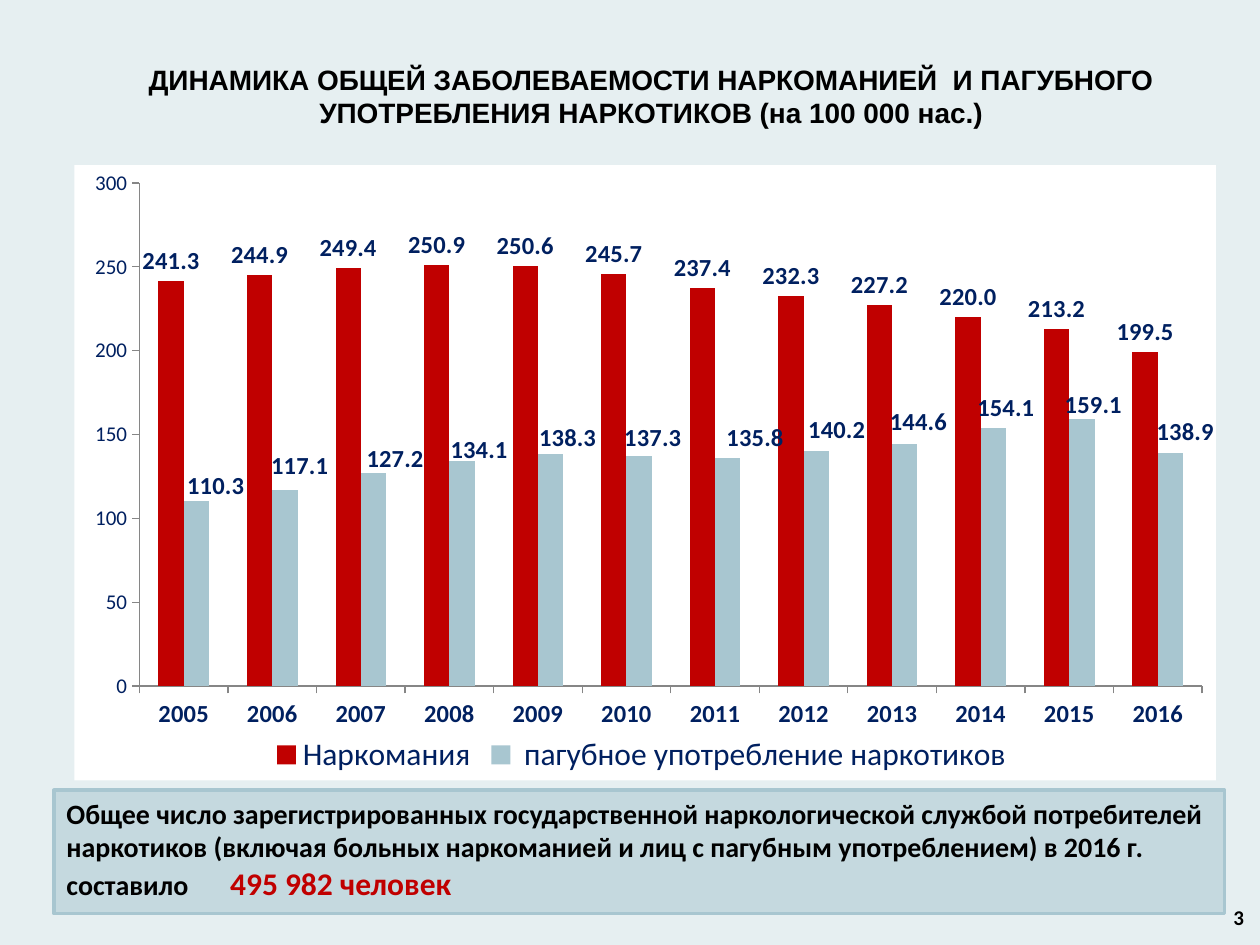
"""Build the slide on drug addiction incidence, 2005 to 2016."""
from lxml.etree import SubElement
from pptx import Presentation
from pptx.chart.data import CategoryChartData
from pptx.dml.color import RGBColor
from pptx.enum.chart import XL_CHART_TYPE as ChartType
from pptx.enum.chart import XL_LABEL_POSITION as LabelPos
from pptx.enum.chart import XL_LEGEND_POSITION as LegendPos
from pptx.enum.chart import XL_TICK_MARK as Tick
from pptx.enum.shapes import MSO_SHAPE as Shape
from pptx.enum.text import MSO_ANCHOR as Anchor
from pptx.enum.text import PP_ALIGN as Align
from pptx.oxml import parse_xml
from pptx.oxml.ns import nsdecls, qn
from pptx.util import Cm, Pt

BLACK = RGBColor(0x00, 0x00, 0x00)
NAVY = RGBColor(0x00, 0x20, 0x60)
RED = RGBColor(0xC0, 0x00, 0x00)
STEEL = RGBColor(0xA8, 0xC6, 0xD0)
PANEL = RGBColor(0xC5, 0xD9, 0xDF)
PALE = RGBColor(0xE6, 0xEF, 0xF1)
GREY = RGBColor(0x86, 0x86, 0x86)

YEARS = [str(year) for year in range(2005, 2017)]
ADDICTION = [241.3, 244.9, 249.4, 250.9, 250.6, 245.7,
             237.4, 232.3, 227.2, 220.0, 213.2, 199.5]
HARMFUL_USE = [110.3, 117.1, 127.2, 134.1, 138.3, 137.3,
               135.8, 140.2, 144.6, 154.1, 159.1, 138.9]
LABEL_SHIFTS = [(1.7, 0.8), (1.3, -0.6), (1.9, 1), (1.5, 1.5), (1.5, 0.6), (1.2, 0.3),
                (2.4, 0), (1.8, -0.2), (1.2, -0.3), (1.1, 0), (1, 1), (1.3, -0.2)]


def write(paragraph, text, size=16, color=BLACK, font="Calibri", align=Align.LEFT):
    paragraph.alignment = align
    run = paragraph.add_run()
    run.text = text
    run.font.size = Pt(size)
    run.font.bold = True
    run.font.name = font
    run.font.color.rgb = color


def manual_layout(**parts):
    layout = parse_xml(f"<c:layout {nsdecls('c')}><c:manualLayout/></c:layout>")
    for tag, value in parts.items():
        SubElement(layout[0], qn(f"c:{tag}")).set("val", str(value))
    return layout


prs = Presentation()
prs.slide_width, prs.slide_height = Cm(25.4), Cm(19.05)
slide = prs.slides.add_slide(prs.slide_layouts[5])
slide.background.fill.solid()
slide.background.fill.fore_color.rgb = PALE

heading = slide.shapes.title
heading.left, heading.top, heading.width, heading.height = Cm(1.7), Cm(0.74), Cm(22.86), Cm(2.39)
heading.text_frame.vertical_anchor = Anchor.MIDDLE
write(heading.text_frame.paragraphs[0],
      "ДИНАМИКА ОБЩЕЙ ЗАБОЛЕВАЕМОСТИ НАРКОМАНИЕЙ  И ПАГУБНОГО "
      "УПОТРЕБЛЕНИЯ НАРКОТИКОВ (на 100 000 нас.)", font="Arial", align=Align.CENTER)

rates = CategoryChartData(number_format="0.0")
rates.categories = YEARS
rates.add_series("Наркомания", ADDICTION)
rates.add_series(" пагубное употребление наркотиков ", HARMFUL_USE)
chart = slide.shapes.add_chart(ChartType.COLUMN_CLUSTERED, Cm(1.5), Cm(3.33),
                               Cm(23.01), Cm(12.4), rates).chart
chart.has_title = False
chart.font.size, chart.font.name = Pt(18), "Calibri"
chart.font.color.rgb = NAVY
chart.has_legend = True
chart.legend.position = LegendPos.BOTTOM
chart.legend.include_in_layout = False

chart_xml = chart.element.find(qn("c:chart"))
chart_xml.addnext(parse_xml(
    f"<c:spPr {nsdecls('c', 'a')}><a:solidFill><a:srgbClr val='FFFFFF'/></a:solidFill>"
    "<a:ln><a:noFill/></a:ln></c:spPr>"))
chart_xml.find(qn("c:plotArea")).insert(0, manual_layout(
    layoutTarget="inner", xMode="edge", yMode="edge",
    x=5.7 / 100, y=2.9 / 100, w=93.1 / 100, h=81.8 / 100))

years_axis, rate_axis = chart.category_axis, chart.value_axis
for axis, size, bold in ((years_axis, 14, True), (rate_axis, 12, False)):
    axis.major_tick_mark, axis.minor_tick_mark = Tick.OUTSIDE, Tick.NONE
    axis.has_major_gridlines = False
    axis.format.line.color.rgb = GREY
    axis.tick_labels.font.size, axis.tick_labels.font.bold = Pt(size), bold
rate_axis.minimum_scale, rate_axis.maximum_scale, rate_axis.major_unit = 0, 300, 50
rate_axis.tick_labels.number_format = "0"
rate_axis.tick_labels.number_format_is_linked = False

columns = chart.plots[0]
columns.gap_width, columns.overlap, columns.vary_by_categories = 150, 0, False
for series, color in zip(columns.series, (RED, STEEL)):
    series.format.fill.solid()
    series.format.fill.fore_color.rgb = color
    labels = series.data_labels
    labels.show_value, labels.position = True, LabelPos.OUTSIDE_END
    labels.number_format, labels.number_format_is_linked = "0.0", False
    labels.font.size, labels.font.bold = Pt(14), True
    labels.font.color.rgb = NAVY

harmful_use = columns.series[1]
for index, (right, down) in enumerate(LABEL_SHIFTS):
    label = harmful_use.points[index].data_label
    label.position = LabelPos.OUTSIDE_END
    label.font.size, label.font.bold = Pt(14), True
    label.font.color.rgb = NAVY
    label_xml = harmful_use.data_labels._element.findall(qn("c:dLbl"))[index]
    label_xml.insert(1, manual_layout(x=right / 100, y=down / 100))
    label_xml.insert(2, parse_xml(
        f"<c:numFmt {nsdecls('c')} formatCode='0.0' sourceLinked='0'/>"))

page_number = slide.shapes.add_textbox(Cm(19.41), Cm(17.98), Cm(5.92), Cm(1.02)).text_frame
page_number.word_wrap = True
page_number.vertical_anchor = Anchor.MIDDLE
write(page_number.paragraphs[0], "3", size=12, align=Align.RIGHT)

summary = slide.shapes.add_shape(Shape.RECTANGLE, Cm(1.09), Cm(15.93), Cm(23.6), Cm(2.49))
summary.shadow.inherit = False
summary.fill.solid()
summary.fill.fore_color.rgb = PANEL
summary.line.color.rgb = STEEL
summary.line.width = Pt(2)
summary.text_frame.word_wrap = True
summary.text_frame.vertical_anchor = Anchor.TOP
total = summary.text_frame.paragraphs[0]
write(total, "Общее число зарегистрированных государственной наркологической службой потребителей "
      "наркотиков (включая больных наркоманией и лиц с пагубным употреблением) "
      "в 2016 г. составило")
write(total, "\t495 982 человек", size=18, color=RED)
tab_stops = SubElement(total._p.get_or_add_pPr(), qn("a:tabLst"))
SubElement(tab_stops, qn("a:tab"), pos=str(Cm(3.3)), algn="l")

prs.save("out.pptx")
